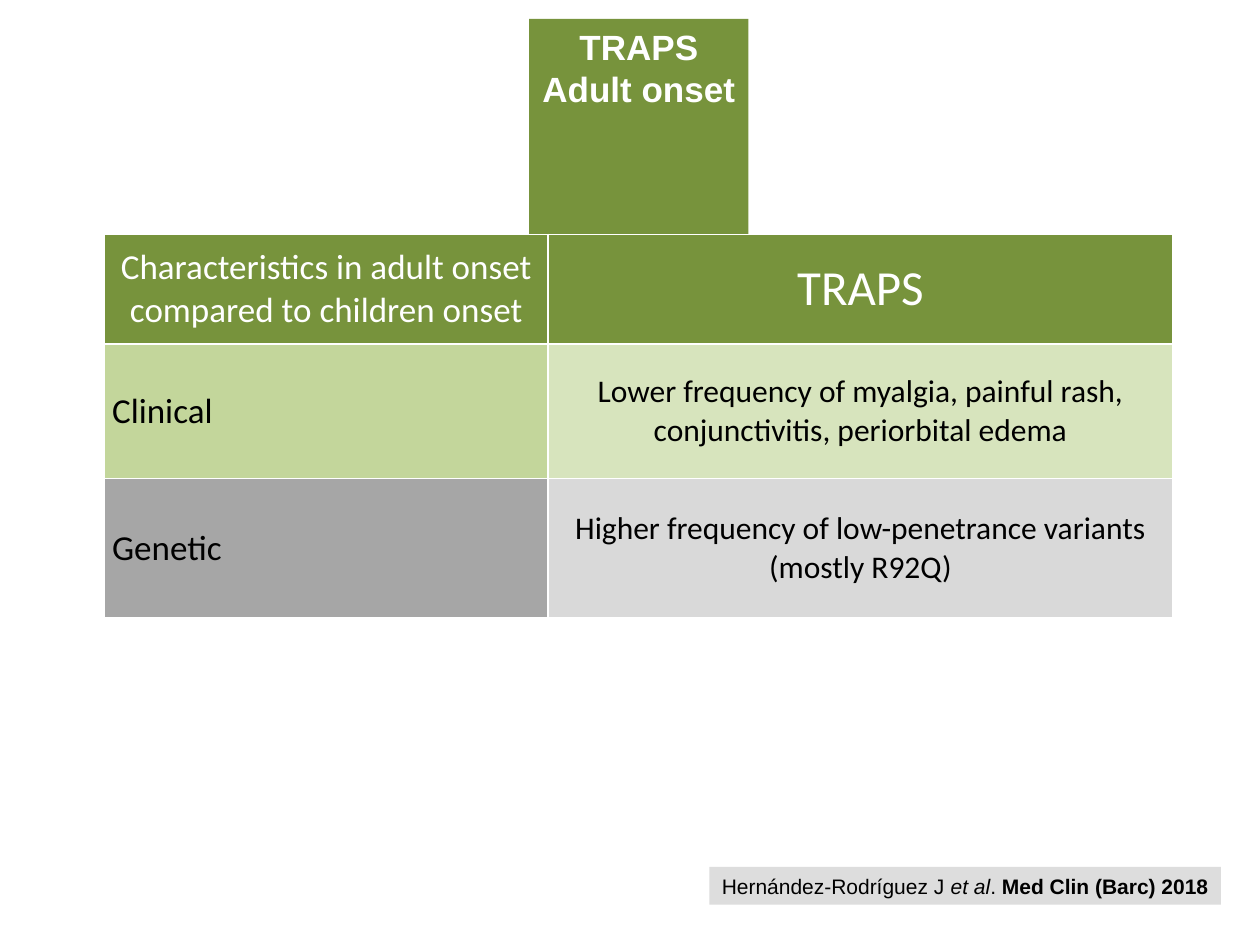
from lxml.etree import SubElement
from pptx import Presentation
from pptx.dml.color import RGBColor
from pptx.enum.shapes import MSO_SHAPE
from pptx.enum.text import MSO_ANCHOR, MSO_AUTO_SIZE, PP_ALIGN
from pptx.oxml.ns import qn
from pptx.util import Inches, Pt

COLORS = {
    "white": "FFFFFF", "black": "000000", "header": "77933C",
    "clinical": "C3D69B", "clinical light": "D7E4BD",
    "genetic": "A6A6A6", "genetic light": "D9D9D9", "citation": "DDDDDD",
}


def paint(fill, color):
    fill.solid()
    fill.fore_color.rgb = RGBColor.from_string(COLORS[color])


def add_run(paragraph, text, size, color, font, bold=False, italic=False):
    run = paragraph.add_run()
    run.text = text
    run.font.name, run.font.size = font, Pt(size)
    run.font.bold, run.font.italic = bold, italic
    run.font.color.rgb = RGBColor.from_string(COLORS[color])


def add_lines(frame, lines, align, **style):
    for number, line in enumerate(lines):
        paragraph = frame.add_paragraph() if number else frame.paragraphs[0]
        paragraph.alignment = align
        add_run(paragraph, line, **style)


def add_borders(cell):
    properties = cell._tc.get_or_add_tcPr()
    for position, side in enumerate(("lnL", "lnR", "lnT", "lnB")):
        line = SubElement(properties, qn(f"a:{side}"), w=str(Pt(1)))
        SubElement(SubElement(line, qn("a:solidFill")), qn("a:srgbClr"), val=COLORS["white"])
        properties.insert(position, line)  # borders come before the fill


def build_title(slide, box):
    title = slide.shapes.title
    title.left, title.top, title.width, title.height = box
    paint(title.fill, "header")
    frame = title.text_frame
    frame.word_wrap = False
    frame.auto_size = MSO_AUTO_SIZE.SHAPE_TO_FIT_TEXT
    frame.vertical_anchor = MSO_ANCHOR.TOP
    add_lines(frame, ["TRAPS", "Adult onset"], PP_ALIGN.CENTER,
              size=20, color="white", font="Arial", bold=True)


def build_comparison(slide, box):
    # Each cell: lines, size, text colour, fill
    rows = [
        [(["Characteristics in adult onset", "compared to children onset"], 20, "white", "header"),
         (["TRAPS"], 28, "white", "header")],
        [(["Clinical"], 20, "black", "clinical"),
         (["Lower frequency of myalgia, painful rash, conjunctivitis, periorbital edema"],
          18, "black", "clinical light")],
        [(["Genetic"], 20, "black", "genetic"),
         (["Higher frequency of low-penetrance variants (mostly R92Q)"],
          18, "black", "genetic light")],
    ]
    left, top, width, height = box
    table = slide.shapes.add_table(len(rows), 2, left, top, width, height).table
    table.horz_banding = table.first_row = False
    for column, share in zip(table.columns, (0.415, 0.585)):
        column.width = int(width * share)
    for row, share in zip(table.rows, (0.286, 0.352, 0.362)):
        row.height = int(height * share)

    for r, row in enumerate(rows):
        for c, (lines, size, color, fill) in enumerate(row):
            cell = table.cell(r, c)
            paint(cell.fill, fill)
            add_borders(cell)
            cell.vertical_anchor = MSO_ANCHOR.MIDDLE
            cell.margin_left = cell.margin_right = Inches(0.06)
            cell.margin_top = cell.margin_bottom = 0
            row_label = r > 0 and c == 0
            add_lines(cell.text_frame, lines, PP_ALIGN.LEFT if row_label else PP_ALIGN.CENTER,
                      size=size, color=color, font="Calibri")


def build_citation(slide, box):
    citation = slide.shapes.add_shape(MSO_SHAPE.RECTANGLE, *box)
    citation.shadow.inherit = False
    citation.line.fill.background()
    paint(citation.fill, "citation")
    frame = citation.text_frame
    frame.word_wrap = True
    frame.auto_size = MSO_AUTO_SIZE.SHAPE_TO_FIT_TEXT
    frame.vertical_anchor = MSO_ANCHOR.MIDDLE
    reference = frame.paragraphs[0]
    reference.alignment = PP_ALIGN.RIGHT
    # Hanging indent
    indent = Inches(0.38)
    properties = reference._p.get_or_add_pPr()
    properties.set("marL", str(indent))
    properties.set("indent", str(-indent))
    for text, bold, italic in [
        ("Hernández-Rodríguez J ", False, False), ("et al", False, True),
        (". ", False, False), ("Med Clin (Barc) 2018", True, False),
    ]:
        add_run(reference, text, 12, "black", "Arial", bold, italic)


def main():
    prs = Presentation()
    prs.slide_width, prs.slide_height = Inches(10), Inches(7.5)
    slide = prs.slides.add_slide(prs.slide_layouts[5])

    def area(*lengths):
        return [Inches(length) for length in lengths]

    build_comparison(slide, area(0.83, 1.86, 8.48, 3.04))
    build_citation(slide, area(5.63, 6.88, 4.06, 0.3))
    build_title(slide, area(4.2, 0.15, 1.74, 0.77))
    prs.save("out.pptx")


if __name__ == "__main__":
    main()
